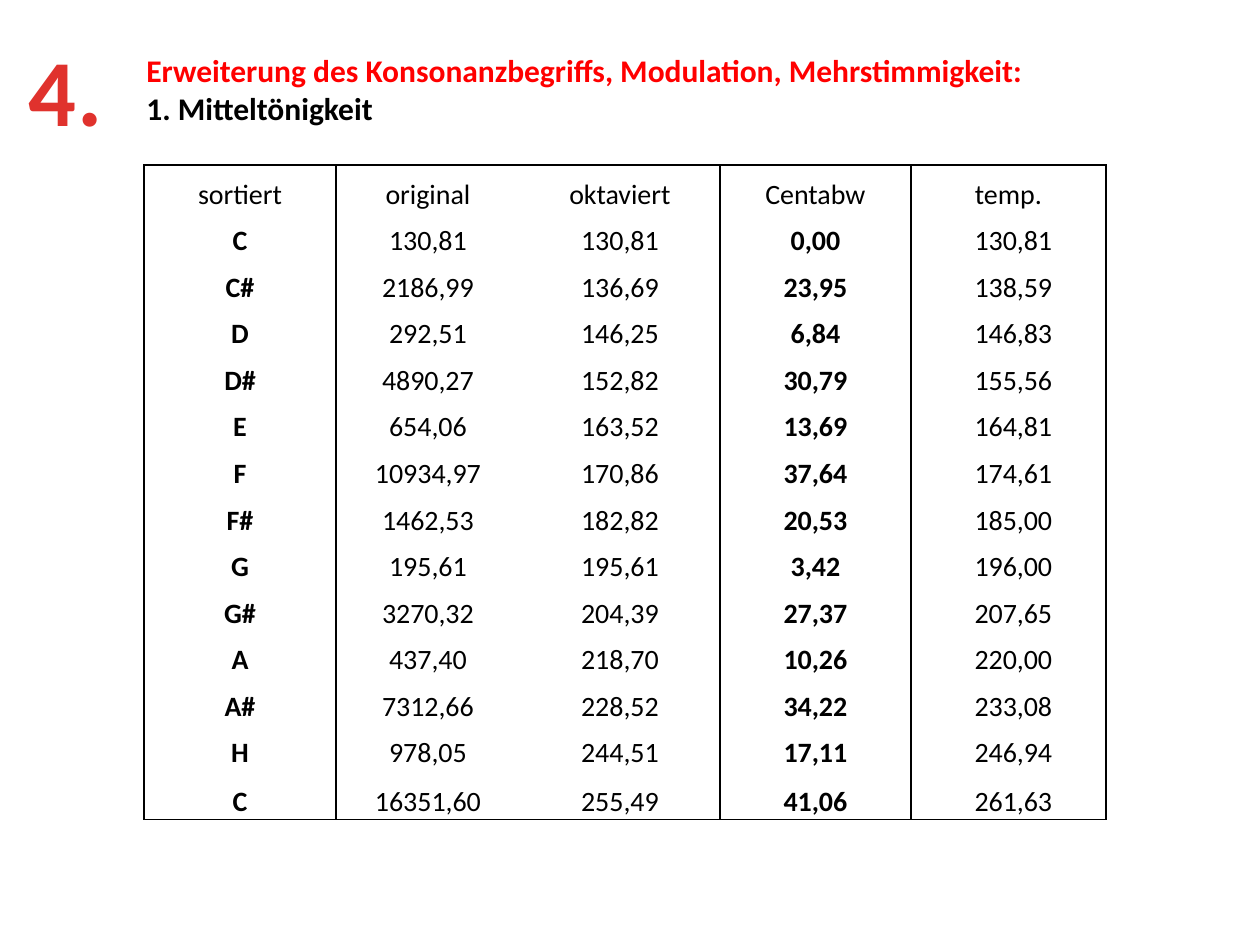
from dataclasses import dataclass

from lxml.etree import SubElement
from pptx import Presentation
from pptx.dml.color import RGBColor
from pptx.enum.shapes import MSO_SHAPE
from pptx.enum.text import MSO_ANCHOR, MSO_AUTO_SIZE, PP_ALIGN
from pptx.oxml.ns import qn
from pptx.util import Emu, Pt


@dataclass(frozen=True)
class Theme:
    font: str = "Calibri"
    paper: RGBColor = RGBColor(255, 255, 255)
    ink: RGBColor = RGBColor(0, 0, 0)
    accent: RGBColor = RGBColor(255, 0, 0)
    number_top: RGBColor = RGBColor(0xE0, 0x32, 0x2D)
    number_bottom: RGBColor = RGBColor(0xA2, 0x20, 0x1C)
    heading_size: int = 18
    number_size: int = 54
    table_size: int = 16
    border_width: int = 1


THEME = Theme()
EMU_PER_PX = 914400 / 126

HEADERS = ("sortiert", "original", "oktaviert", "Centabw", "temp.")
TONES = (
    ("C", "130,81", "130,81", "0,00", "130,81"),
    ("C#", "2186,99", "136,69", "23,95", "138,59"),
    ("D", "292,51", "146,25", "6,84", "146,83"),
    ("D#", "4890,27", "152,82", "30,79", "155,56"),
    ("E", "654,06", "163,52", "13,69", "164,81"),
    ("F", "10934,97", "170,86", "37,64", "174,61"),
    ("F#", "1462,53", "182,82", "20,53", "185,00"),
    ("G", "195,61", "195,61", "3,42", "196,00"),
    ("G#", "3270,32", "204,39", "27,37", "207,65"),
    ("A", "437,40", "218,70", "10,26", "220,00"),
    ("A#", "7312,66", "228,52", "34,22", "233,08"),
    ("H", "978,05", "244,51", "17,11", "246,94"),
    ("C", "16351,60", "255,49", "41,06", "261,63"),
)
COLUMN_WIDTHS = (192, 184, 200, 191, 195)
BOLD_COLUMNS = {0, 3}
RULED_EDGES = {0, 1, 3, 4, 5}
LAST_ROW_HEIGHT = 49
UPPER_ROWS_HEIGHT = 606


def px(length):
    return Emu(round(length * EMU_PER_PX))


def add_run(paragraph, text, size, color=None, bold=False):
    run = paragraph.add_run()
    run.text = text
    run.font.name = THEME.font
    run.font.size = Pt(size)
    run.font.bold = bold
    if color is not None:
        run.font.color.rgb = color
    return run


def fit_to_text(frame):
    frame.word_wrap = False
    frame.auto_size = MSO_AUTO_SIZE.SHAPE_TO_FIT_TEXT


def add_heading(slide):
    heading = slide.shapes.add_shape(MSO_SHAPE.RECTANGLE, px(134), px(45), px(910), px(89))
    heading.shadow.inherit = False
    heading.fill.solid()
    heading.fill.fore_color.rgb = THEME.paper
    heading.line.fill.background()
    frame = heading.text_frame
    fit_to_text(frame)
    frame.vertical_anchor = MSO_ANCHOR.TOP
    topic = frame.paragraphs[0]
    subtopic = frame.add_paragraph()
    topic.alignment = subtopic.alignment = PP_ALIGN.LEFT
    add_run(topic, "Erweiterung des Konsonanzbegriffs, Modulation, Mehrstimmigkeit:",
            THEME.heading_size, THEME.accent, bold=True)
    add_run(subtopic, "1. Mitteltönigkeit", THEME.heading_size, THEME.ink, bold=True)


def add_chapter_number(slide):
    frame = slide.shapes.add_textbox(px(15), px(26), px(101), px(127)).text_frame
    fit_to_text(frame)
    paragraph = frame.paragraphs[0]
    paragraph.alignment = PP_ALIGN.CENTER
    number = add_run(paragraph, "4.", THEME.number_size, bold=True)
    number.font.fill.gradient()
    number.font.fill.gradient_angle = 270
    shades = ((0.25, THEME.number_top), (1, THEME.number_bottom))
    for stop, (position, shade) in zip(number.font.fill.gradient_stops, shades):
        stop.position = position
        stop.color.rgb = shade
    number.font._element.set("spc", "50")


def set_borders(cell, visible_sides):
    properties = cell._tc.get_or_add_tcPr()
    for side in "LRTB":
        border = SubElement(properties, qn(f"a:ln{side}"), w=str(Pt(THEME.border_width)))
        if side in visible_sides:
            solid = SubElement(border, qn("a:solidFill"))
            SubElement(solid, qn("a:srgbClr"), val=str(THEME.ink))
        else:
            SubElement(border, qn("a:noFill"))


def fill_cell(cell, text, bold, left_margin, visible_sides):
    set_borders(cell, visible_sides)
    cell.fill.background()
    cell.vertical_anchor = MSO_ANCHOR.BOTTOM
    cell.margin_left = px(left_margin)
    cell.margin_right = cell.margin_top = px(1)
    cell.margin_bottom = 0
    paragraph = cell.text_frame.paragraphs[0]
    paragraph.alignment = PP_ALIGN.CENTER
    add_run(paragraph, text, THEME.table_size, THEME.ink, bold)


def add_tone_table(slide):
    rows = (HEADERS, *TONES)
    last_row, last_column = len(rows) - 1, len(HEADERS) - 1
    height = UPPER_ROWS_HEIGHT + LAST_ROW_HEIGHT
    table = slide.shapes.add_table(len(rows), len(HEADERS), px(144), px(165),
                                   px(sum(COLUMN_WIDTHS)), px(height)).table
    table.first_row = table.horz_banding = False
    for column, width in zip(table.columns, COLUMN_WIDTHS):
        column.width = px(width)
    for index, row in enumerate(table.rows):
        row.height = px(LAST_ROW_HEIGHT if index == last_row else UPPER_ROWS_HEIGHT / last_row)
    for r, values in enumerate(rows):
        for c, text in enumerate(values):
            edges = {"L": c in RULED_EDGES, "R": c + 1 in RULED_EDGES,
                     "T": r == 0, "B": r == last_row}
            visible_sides = {side for side, ruled in edges.items() if ruled}
            left_margin = 11 if r > 0 and c == last_column else 1
            fill_cell(table.cell(r, c), text, r > 0 and c in BOLD_COLUMNS,
                      left_margin, visible_sides)


def main():
    presentation = Presentation()
    presentation.slide_width = px(1260)
    presentation.slide_height = px(945)
    slide = presentation.slides.add_slide(presentation.slide_layouts[6])
    add_heading(slide)
    add_chapter_number(slide)
    add_tone_table(slide)
    presentation.save("out.pptx")


if __name__ == "__main__":
    main()
